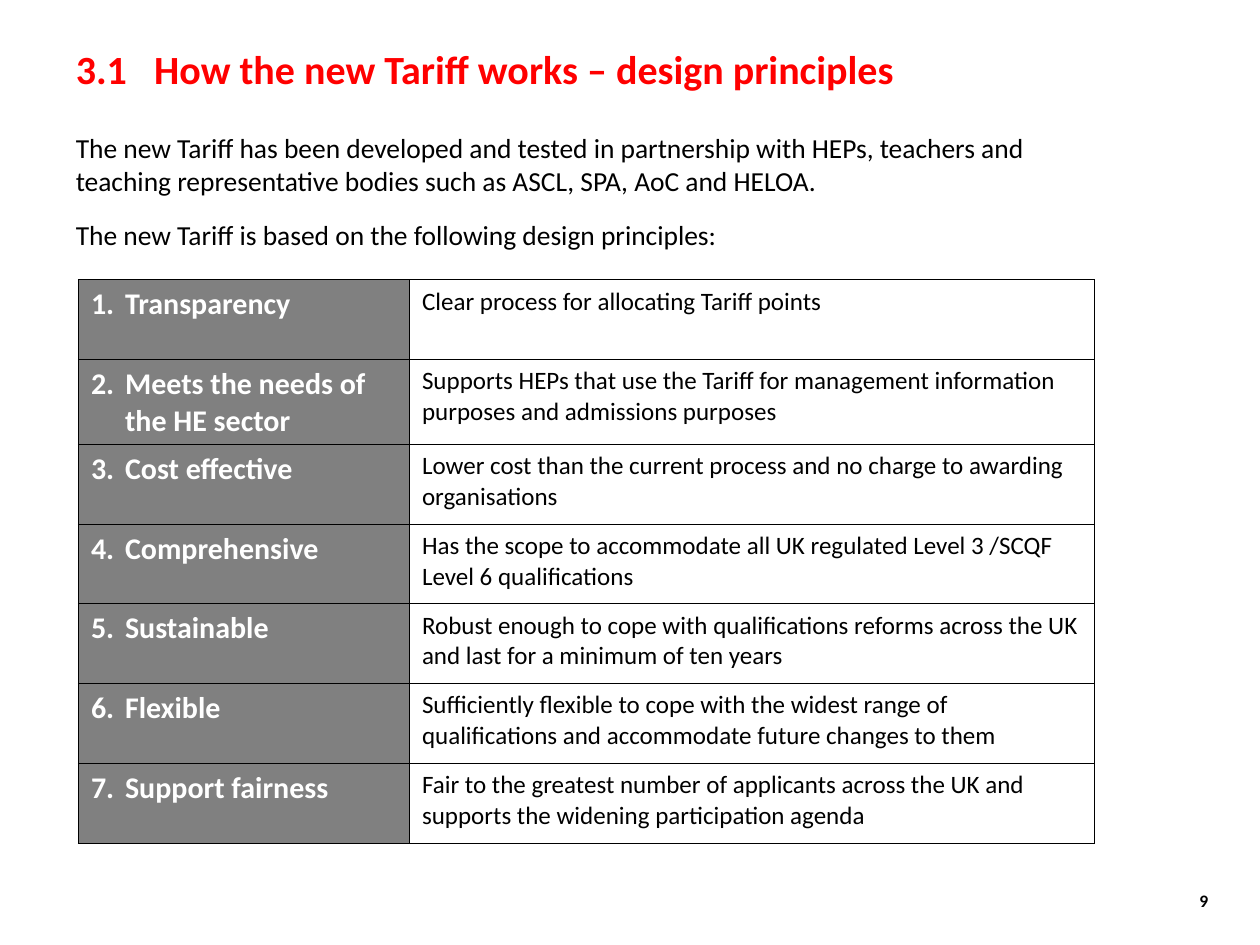
from lxml import etree
from pptx import Presentation
from pptx.dml.color import RGBColor
from pptx.enum.text import MSO_ANCHOR as Anchor, PP_ALIGN as Align
from pptx.oxml.ns import qn
from pptx.util import Cm, Pt

RED = RGBColor(0xFF, 0x00, 0x00)
BLACK = RGBColor(0x00, 0x00, 0x00)
WHITE = RGBColor(0xFF, 0xFF, 0xFF)
GREY = RGBColor(0x80, 0x80, 0x80)

INSETS = dict(margin_left=Cm(0.36), margin_right=Cm(0.36),
              margin_top=Cm(0.18), margin_bottom=Cm(0.18))
TITLE = dict(size=Pt(32), bold=True, color=RED)
BODY = dict(size=Pt(22), bold=False, color=BLACK)
PAGE_NUMBER = dict(size=Pt(14), bold=True, color=BLACK)
PRINCIPLE = dict(size=Pt(24), bold=True, color=WHITE)
MEANING = dict(size=Pt(20), bold=False, color=BLACK)

INTRO = [
    "The new Tariff has been developed and tested in partnership with HEPs, "
    "teachers and teaching representative bodies such as ASCL, SPA, AoC and HELOA.",
    "The new Tariff is based on the following design principles:",
]
PRINCIPLES = [
    ("Transparency", "Clear process for allocating Tariff points"),
    ("Meets the needs of the HE sector",
     "Supports HEPs that use the Tariff for management information purposes "
     "and admissions purposes"),
    ("Cost effective",
     "Lower cost than the current process and no charge to awarding organisations"),
    ("Comprehensive",
     "Has the scope to accommodate all UK regulated Level 3 /SCQF Level 6 "
     "qualifications"),
    ("Sustainable",
     "Robust enough to cope with qualifications reforms across the UK and last "
     "for a minimum of ten years"),
    ("Flexible",
     "Sufficiently flexible to cope with the widest range of qualifications and "
     "accommodate future changes to them"),
    ("Support fairness",
     "Fair to the greatest number of applicants across the UK and supports the "
     "widening participation agenda"),
]


def set_all(target, values):
    for name, value in values.items():
        setattr(target, name, value)


def add_span(para, text, style):
    span = para.add_run()
    span.text = text
    span.font.name = "Calibri"
    span.font.color.rgb = style["color"]
    set_all(span.font, {key: style[key] for key in ("size", "bold")})


def add_text(page, place, texts, style, align=Align.LEFT, anchor=Anchor.TOP, gap=0):
    box = page.shapes.add_textbox(*(Cm(length) for length in place))
    frame = box.text_frame
    set_all(frame, dict(INSETS, word_wrap=True, vertical_anchor=anchor))
    for index, text in enumerate(texts):
        para = frame.paragraphs[0] if index == 0 else frame.add_paragraph()
        para.alignment = align
        if index:
            para.space_before = Pt(gap)
        add_span(para, text, style)
    return box


def add_tab_stop(para, position):
    tabs = etree.SubElement(para._p.get_or_add_pPr(), qn("a:tabLst"))
    etree.SubElement(tabs, qn("a:tab"), pos=str(position), algn="l")


def number_paragraph(para, number):
    props = para._p.get_or_add_pPr()
    indent = Cm(0.96)
    props.set("marL", str(indent))
    props.set("indent", str(-indent))
    etree.SubElement(props, qn("a:buFont"), typeface="+mj-lt")
    etree.SubElement(props, qn("a:buAutoNum"), type="arabicPeriod",
                     startAt=str(number))


def add_borders(cell):
    props = cell._tc.get_or_add_tcPr()
    for side in ("lnL", "lnR", "lnT", "lnB"):
        line = etree.SubElement(props, qn(f"a:{side}"), w=str(Pt(1)))
        fill = etree.SubElement(line, qn("a:solidFill"))
        etree.SubElement(fill, qn("a:srgbClr"), val=str(BLACK))


def fill_cell(cell, text, style, number=None):
    set_all(cell, dict(INSETS, vertical_anchor=Anchor.TOP))
    add_borders(cell)
    para = cell.text_frame.paragraphs[0]
    if number:
        number_paragraph(para, number)
        cell.fill.solid()
        cell.fill.fore_color.rgb = GREY
    else:
        cell.fill.background()
    add_span(para, text, style)


def add_principles(page):
    widths, row_height = (9.34, 19.33), 2.25
    table = page.shapes.add_table(
        len(PRINCIPLES), len(widths), Cm(2.21), Cm(7.9),
        Cm(sum(widths)), Cm(row_height * len(PRINCIPLES))).table
    set_all(table, dict(first_row=False, horz_banding=False))
    for column, width in zip(table.columns, widths):
        column.width = Cm(width)
    for row, (principle, meaning) in enumerate(PRINCIPLES):
        table.rows[row].height = Cm(row_height)
        fill_cell(table.cell(row, 0), principle, PRINCIPLE, number=row + 1)
        fill_cell(table.cell(row, 1), meaning, MEANING)


def main():
    deck = Presentation()
    set_all(deck, dict(slide_width=Cm(35.56), slide_height=Cm(26.67)))
    page = deck.slides.add_slide(deck.slide_layouts[6])

    # Heading, with a tab between number and words
    heading = add_text(page, (1.78, 1.07, 32, 4.45),
                       ["3.1\tHow the new Tariff works – design principles"], TITLE)
    add_tab_stop(heading.text_frame.paragraphs[0], Cm(2.21))

    # Introduction
    add_text(page, (1.78, 3.51, 29.21, 4.04), INTRO, BODY, gap=16.8)

    # Numbered design principles
    add_principles(page)

    # Page number
    add_text(page, (32.33, 24.71, 2.13, 1.42), ["9"], PAGE_NUMBER,
             align=Align.RIGHT, anchor=Anchor.MIDDLE)

    deck.save("out.pptx")


if __name__ == "__main__":
    main()
